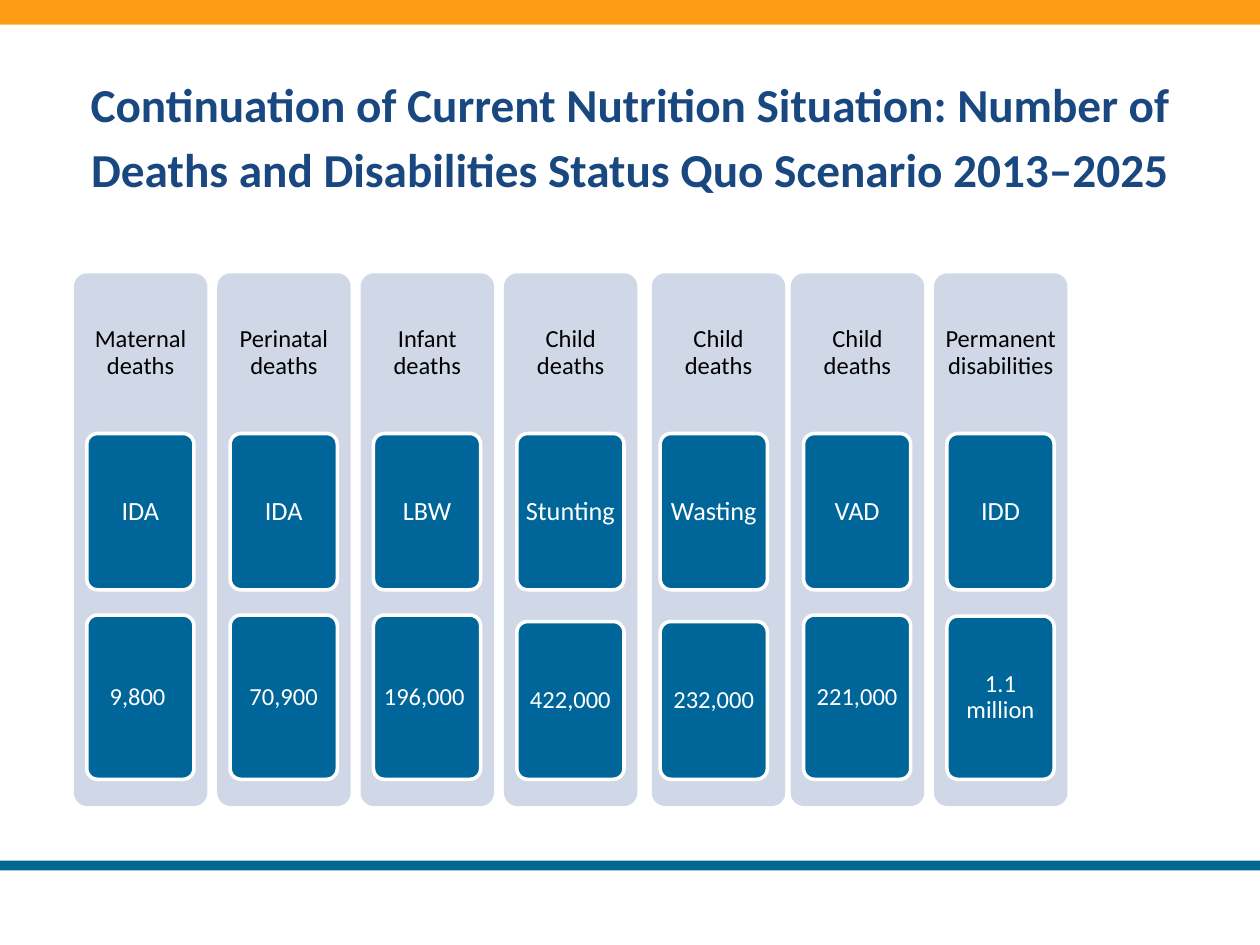
from pptx import Presentation
from pptx import util as u
from pptx.dml.color import RGBColor
from pptx.enum import shapes, text

COLORS = {
    "orange": "FF9C16",
    "footer": "006891",
    "title": "194881",
    "panel": "D0D8E8",
    "card": "006699",
    "white": "FFFFFF",
    "black": "000000",
}
FONT = "Calibri"

# Heading, cause, number, panel shift, top of the number card (cm)
COLUMNS = [
    ("Maternal deaths", "IDA", "9,800 ", 0, 12.4),
    ("Perinatal deaths", "IDA", "70,900", 0, 12.4),
    ("Infant deaths", "LBW", "196,000 ", 0, 12.4),
    ("Child deaths", "Stunting", "422,000", 0, 12.53),
    ("Child deaths", "Wasting", "232,000", 0.09, 12.53),
    ("Child deaths", "VAD", "221,000", 0, 12.4),
    ("Permanent disabilities", "IDD", "1.1 million", 0, 12.42),
]
FIRST_LEFT, PITCH = 1.49, 2.89
PANEL_TOP, PANEL_WIDTH, PANEL_HEIGHT = 5.51, 2.69, 10.74
HEADING_HEIGHT = 3.22
CARD_INDENT, CARD_WIDTH = 0.26, 2.16
CAUSE_TOP, CAUSE_HEIGHT = 8.74, 3.15
NUMBER_BOTTOM = 15.71


def rgb(name):
    return RGBColor.from_string(COLORS[name])


def apply(target, values):
    """Set each attribute of the target from a dict."""
    for name, value in values.items():
        setattr(target, name, value)


def write_text(shape, wording, color, size, inset=0.1, bold=False, **spacing):
    frame = shape.text_frame
    margins = {f"margin_{side}": u.Cm(inset) for side in ("left", "right", "top", "bottom")}
    apply(frame, {"word_wrap": True, "auto_size": text.MSO_AUTO_SIZE.NONE,
                  "vertical_anchor": text.MSO_ANCHOR.MIDDLE, **margins})
    paragraph = frame.paragraphs[0]
    apply(paragraph, {"alignment": text.PP_ALIGN.CENTER, "line_spacing": 0.9, **spacing})
    run = paragraph.add_run()
    run.text = wording
    apply(run.font, {"name": FONT, "size": u.Pt(size), "bold": bold})
    run.font.color.rgb = rgb(color)


def add_box(slide, left, top, width, height, fill, rounded=True, outline=None):
    kind = shapes.MSO_SHAPE.ROUNDED_RECTANGLE if rounded else shapes.MSO_SHAPE.RECTANGLE
    shape = slide.shapes.add_shape(kind, u.Cm(left), u.Cm(top), u.Cm(width), u.Cm(height))
    shape.shadow.inherit = False
    shape.fill.solid()
    shape.fill.fore_color.rgb = rgb(fill)
    if rounded:
        shape.adjustments[0] = 0.1
    if outline:
        shape.line.color.rgb = rgb(outline)
        shape.line.width = u.Pt(2)
    else:
        shape.line.fill.background()
    return shape


def add_card(slide, left, top, height, wording, size):
    card = add_box(slide, left, top, CARD_WIDTH, height, "card", outline="white")
    write_text(card, wording, "white", size)


def add_column(slide, index, heading, cause, number, shift, number_top):
    left = FIRST_LEFT + index * PITCH
    panel_left = left + shift
    add_box(slide, panel_left, PANEL_TOP, PANEL_WIDTH, PANEL_HEIGHT, "panel")
    label = slide.shapes.add_textbox(u.Cm(panel_left), u.Cm(PANEL_TOP),
                                     u.Cm(PANEL_WIDTH), u.Cm(HEADING_HEIGHT))
    write_text(label, heading, "black", 14, inset=0.15)
    card_left = left + CARD_INDENT
    add_card(slide, card_left, CAUSE_TOP, CAUSE_HEIGHT, cause, 15)
    add_card(slide, card_left, number_top, NUMBER_BOTTOM - number_top, number, 14)


def format_title(title):
    apply(title, {"left": u.Cm(1.27), "top": u.Cm(1.07),
                  "width": u.Cm(22.86), "height": u.Cm(3.18)})
    write_text(title, "Continuation of Current Nutrition Situation: Number of "
               "Deaths and Disabilities Status Quo Scenario 2013–2025",
               "title", 27, inset=0.2, bold=True, line_spacing=1.15,
               space_before=u.Pt(2), space_after=u.Pt(2))


def main():
    presentation = Presentation()
    apply(presentation, {"slide_width": u.Cm(25.4), "slide_height": u.Cm(19.05)})
    slide = presentation.slides.add_slide(presentation.slide_layouts[5])
    add_box(slide, 0, 17.35, 25.4, 0.2, "footer", rounded=False)
    add_box(slide, 0, 0, 25.4, 0.5, "orange", rounded=False)
    format_title(slide.shapes.title)
    for index, column in enumerate(COLUMNS):
        add_column(slide, index, *column)
    presentation.save("out.pptx")


if __name__ == "__main__":
    main()
